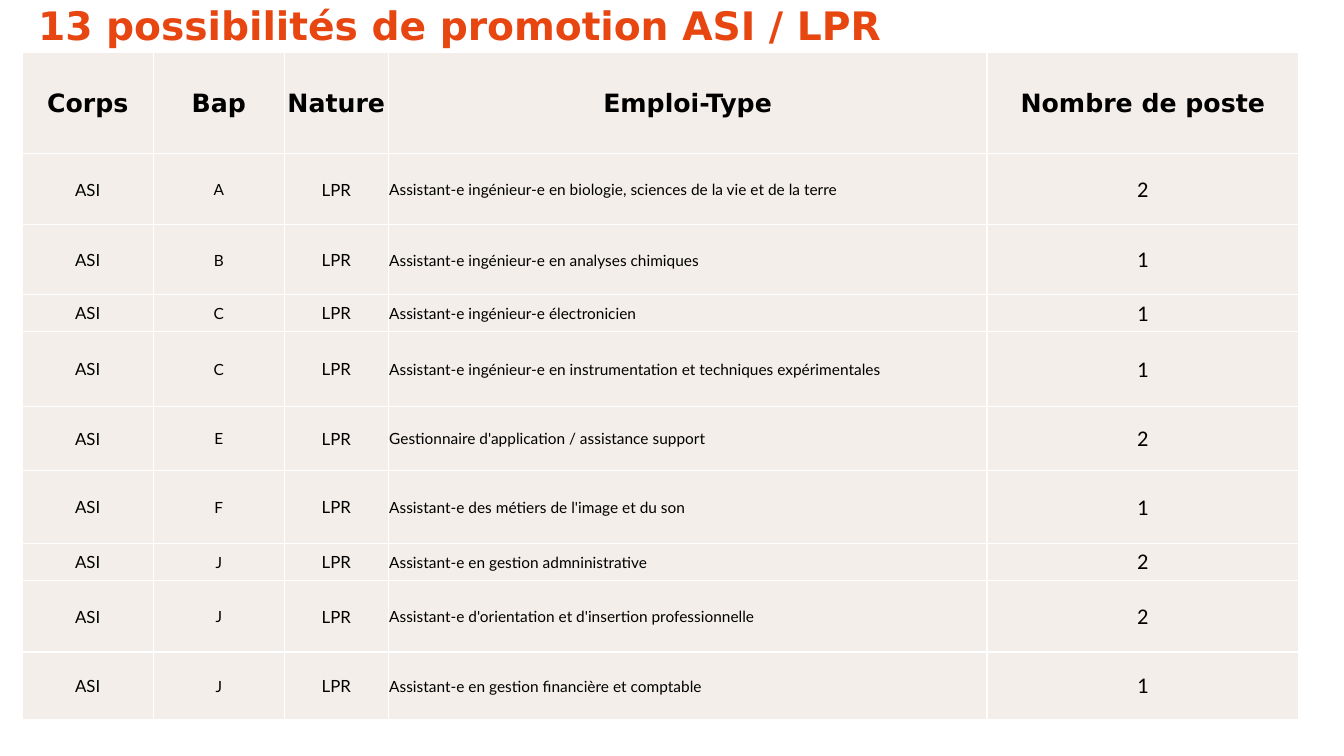
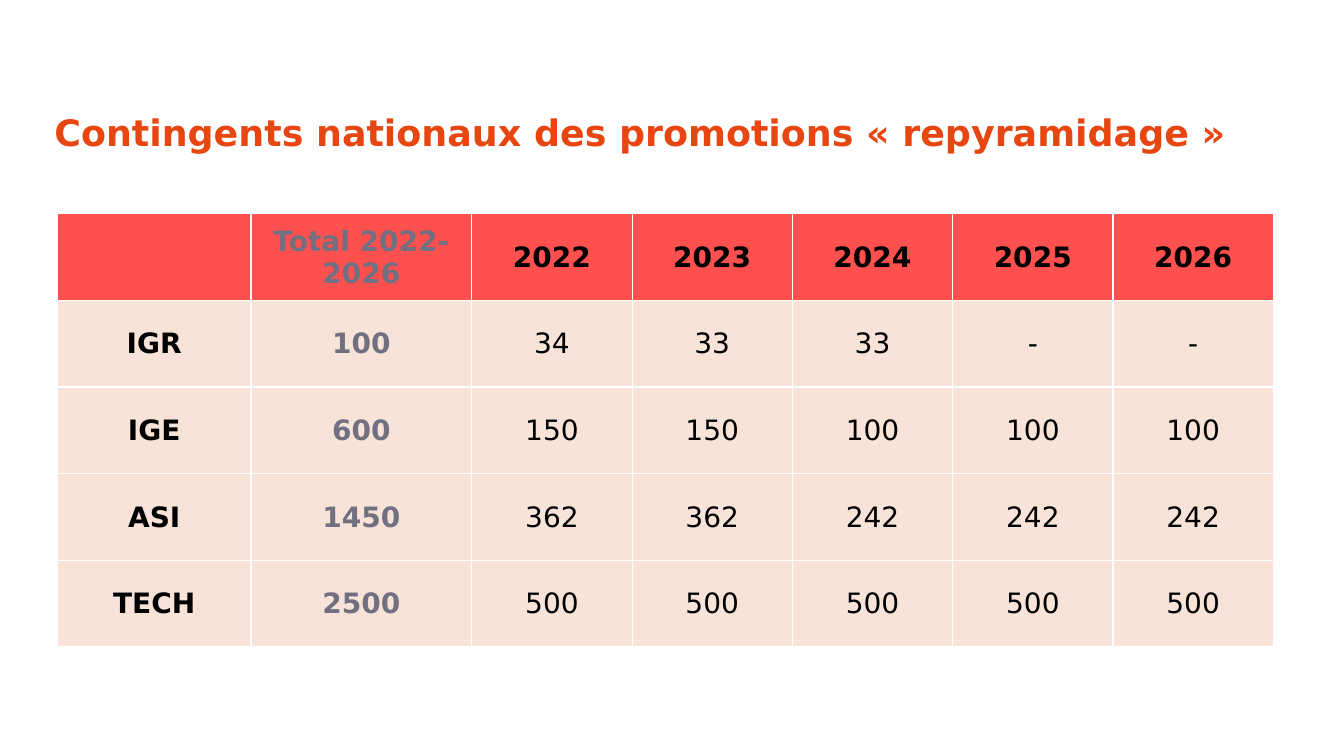
from lxml import etree
from pptx import Presentation
from pptx.dml.color import RGBColor
from pptx.enum import text
from pptx.oxml import ns
from pptx.util import Inches, Pt

ORANGE, BLACK, GREY, WHITE = "E74610", "000000", "707080", "FFFFFF"
BEIGE, RED, PEACH = "F3EEE9", "FF5050", "F7E3D8"
TITLE_FONT = "DejaVu Sans"
CENTER, LEFT = text.PP_ALIGN.CENTER, text.PP_ALIGN.LEFT

JOB_HEADER = ["Corps", "Bap", "Nature", "Emploi-Type", "Nombre de poste"]
# Bap, job type, number of posts, row height in inches
JOBS = [
    ("A", "Assistant-e ingénieur-e en biologie, sciences de la vie et de la terre", 2, 0.71),
    ("B", "Assistant-e ingénieur-e en analyses chimiques", 1, 0.69),
    ("C", "Assistant-e ingénieur-e électronicien", 1, 0.37),
    ("C", "Assistant-e ingénieur-e en instrumentation et techniques expérimentales", 1, 0.74),
    ("E", "Gestionnaire d'application / assistance support", 2, 0.64),
    ("F", "Assistant-e des métiers de l'image et du son", 1, 0.72),
    ("J", "Assistant-e en gestion admninistrative", 2, 0.37),
    ("J", "Assistant-e d'orientation et d'insertion professionnelle", 2, 0.71),
    ("J", "Assistant-e en gestion financière et comptable", 1, 0.67),
]
JOB_WIDTHS = [1.3, 1.3, 1.03, 5.94, 3.09]
# font, size and alignment of each column below the header
JOB_COLUMNS = [
    ("Lato", 12, CENTER),
    ("Lato", 11, CENTER),
    ("Lato", 12, CENTER),
    ("Lato", 11, LEFT),
    ("Calibri", 16, CENTER),
]

QUOTAS = [
    ["", "Total 2022-2026", "2022", "2023", "2024", "2025", "2026"],
    ["IGR", "100", "34", "33", "33", "-", "-"],
    ["IGE", "600", "150", "150", "100", "100", "100"],
    ["ASI", "1450", "362", "362", "242", "242", "242"],
    ["TECH", "2500", "500", "500", "500", "500", "500"],
]
QUOTA_WIDTHS = [1.92, 2.19] + [1.59] * 5
QUOTA_ROW_HEIGHT = 0.86


def color(value):
    return RGBColor.from_string(value)


def set_font(paragraph, name, size, value, bold):
    font = paragraph.font
    font.name, font.size, font.bold = name, Pt(size), bold
    font.color.rgb = color(value)


def add_title(slide, wording, left, top, width, size):
    box = slide.shapes.add_textbox(Inches(left), Inches(top), Inches(width), Inches(0.6))
    box.text_frame.word_wrap = True
    paragraph = box.text_frame.paragraphs[0]
    paragraph.text = wording
    paragraph.line_spacing = 0.8
    set_font(paragraph, TITLE_FONT, size, ORANGE, True)


def add_borders(cell):
    """Draw a thin white line on every side; must precede the cell fill."""
    properties = cell._tc.get_or_add_tcPr()
    for side in ("lnL", "lnR", "lnT", "lnB"):
        line = etree.SubElement(properties, ns.qn(f"a:{side}"), w=str(Pt(1)))
        fill = etree.SubElement(line, ns.qn("a:solidFill"))
        etree.SubElement(fill, ns.qn("a:srgbClr"), val=WHITE)


def add_grid(slide, rows, left, top, widths, heights, cell_style):
    """cell_style(row, column) gives fill, font, size, colour, bold, alignment."""
    frame = slide.shapes.add_table(len(rows), len(widths), Inches(left), Inches(top),
                                   Inches(sum(widths)), Inches(sum(heights)))
    table = frame.table
    table.first_row = table.horz_banding = False
    for column, width in zip(table.columns, widths):
        column.width = Inches(width)
    for row, height in zip(table.rows, heights):
        row.height = Inches(height)
    for r, values in enumerate(rows):
        for c, value in enumerate(values):
            fill, name, size, ink, bold, alignment = cell_style(r, c)
            cell = table.cell(r, c)
            add_borders(cell)
            cell.fill.solid()
            cell.fill.fore_color.rgb = color(fill)
            cell.margin_left = cell.margin_right = cell.margin_top = Inches(0.01)
            cell.margin_bottom = 0
            cell.vertical_anchor = text.MSO_ANCHOR.MIDDLE
            cell.text = str(value)
            paragraph = cell.text_frame.paragraphs[0]
            paragraph.alignment = alignment
            set_font(paragraph, name, size, ink, bold)


def job_style(row, column):
    if row == 0:
        return BEIGE, TITLE_FONT, 18, BLACK, True, CENTER
    name, size, alignment = JOB_COLUMNS[column]
    return BEIGE, name, size, BLACK, False, alignment


def quota_style(row, column):
    fill = RED if row == 0 else PEACH
    ink = GREY if column == 1 else BLACK
    return fill, TITLE_FONT, 20, ink, row == 0 or column < 2, CENTER


def add_slide(presentation):
    return presentation.slides.add_slide(presentation.slide_layouts[6])


def main():
    presentation = Presentation()
    presentation.slide_width, presentation.slide_height = Inches(13.33), Inches(7.5)

    slide = add_slide(presentation)
    rows = [JOB_HEADER] + [["ASI", bap, "LPR", job, posts] for bap, job, posts, _ in JOBS]
    heights = [1] + [job[-1] for job in JOBS]
    add_grid(slide, rows, 0.22, 0.52, JOB_WIDTHS, heights, job_style)
    add_title(slide, "13 possibilités de promotion ASI / LPR", 0.28, 0.05, 9.27, 28)

    slide = add_slide(presentation)
    heights = [QUOTA_ROW_HEIGHT] * len(QUOTAS)
    add_grid(slide, QUOTAS, 0.57, 2.12, QUOTA_WIDTHS, heights, quota_style)
    add_title(slide, "Contingents nationaux des promotions « repyramidage »", 0.44, 1.13, 12.45, 26)

    presentation.save("out.pptx")


if __name__ == "__main__":
    main()
